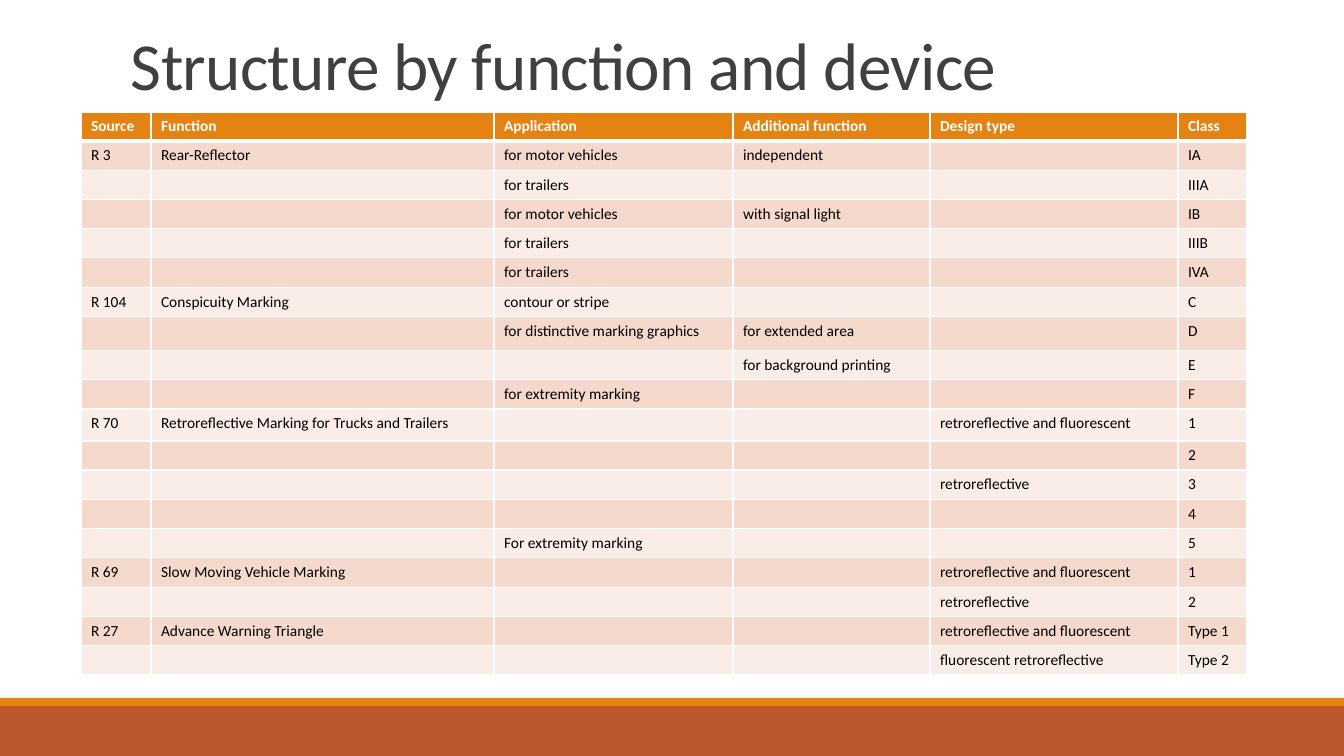
from lxml import etree
from pptx import Presentation
from pptx.dml.color import RGBColor
from pptx.enum.shapes import MSO_SHAPE
from pptx.enum.text import MSO_ANCHOR
from pptx.oxml.ns import qn
from pptx.util import Pt

RECTANGLE = MSO_SHAPE.RECTANGLE
TOP = MSO_ANCHOR.TOP

# Content
TITLE = "Structure by function and device"
HEADER = ("Source", "Function", "Application", "Additional function", "Design type", "Class")
BOTH = "retroreflective and fluorescent"
ROWS = [
    ("R 3", "Rear-Reflector", "for motor vehicles", "independent", "", "IA"),
    ("", "", "for trailers", "", "", "IIIA"),
    ("", "", "for motor vehicles", "with signal light", "", "IB"),
    ("", "", "for trailers", "", "", "IIIB"),
    ("", "", "for trailers", "", "", "IVA"),
    ("R 104", "Conspicuity Marking", "contour or stripe", "", "", "C"),
    ("", "", "for distinctive marking graphics", "for extended area", "", "D"),
    ("", "", "", "for background printing", "", "E"),
    ("", "", "for extremity marking", "", "", "F"),
    ("R 70", "Retroreflective Marking for Trucks and Trailers", "", "", BOTH, "1"),
    ("", "", "", "", "", "2"),
    ("", "", "", "", "retroreflective", "3"),
    ("", "", "", "", "", "4"),
    ("", "", "For extremity marking", "", "", "5"),
    ("R 69", "Slow Moving Vehicle Marking", "", "", BOTH, "1"),
    ("", "", "", "", "retroreflective", "2"),
    ("R 27", "Advance Warning Triangle", "", "", BOTH, "Type 1"),
    ("", "", "", "", "fluorescent retroreflective", "Type 2"),
]

# Theme and layout, lengths in px
THEME = {
    "font": "Calibri", "title_size": 48, "table_size": 11,
    "title": "404040", "header_text": "FFFFFF", "body_text": "000000",
    "accent": "E48312", "footer": "BD582C", "border": "FFFFFF",
    "bands": ("F5D9CC", "FAEDE7"),
}
SLIDE_WIDTH, SLIDE_HEIGHT = 1344, 756
TITLE_BOX = (121, 31, 1109, 160)
TABLE_LEFT, TABLE_TOP = 81, 112
COLUMN_WIDTHS = (70, 343, 239, 197, 248, 69)
ROW_HEIGHT = 29
TALL_ROWS = {5: 30, 7: 34, 10: 32, 15: 30}
FOOTER_BARS = [("footer", 706, 50), ("accent", 698, 8)]
THIN, THICK = 1, 3


def px(length):
    return round(length * 914400 / 100.8)


def color(name):
    return RGBColor.from_string(name)


def style_run(run, size, text_color, bold=False):
    run.font.name = THEME["font"]
    run.font.size = Pt(size)
    run.font.bold = bold
    run.font.color.rgb = color(text_color)


def add_border(cell, side, points):
    line = etree.SubElement(cell._tc.get_or_add_tcPr(), qn(f"a:ln{side}"), w=str(Pt(points)))
    fill = etree.SubElement(line, qn("a:solidFill"))
    etree.SubElement(fill, qn("a:srgbClr"), val=THEME["border"])


def fill_cell(cell, text, row_index):
    is_header = row_index == 0
    widths = {
        "L": THIN, "R": THIN,
        "T": THICK if row_index == 1 else THIN,
        "B": THICK if is_header else THIN,
    }
    for side, points in widths.items():
        add_border(cell, side, points)
    cell.fill.solid()
    cell.fill.fore_color.rgb = color(
        THEME["accent"] if is_header else THEME["bands"][(row_index - 1) % 2])
    paragraph = cell.text_frame.paragraphs[0]
    if text:
        paragraph.text = text
        text_color = THEME["header_text" if is_header else "body_text"]
        style_run(paragraph.runs[0], THEME["table_size"], text_color, is_header)
    else:
        # Keeps empty cells from stretching their row
        etree.SubElement(paragraph._p, qn("a:endParaRPr"), sz=str(THEME["table_size"] * 100))


def add_footer(slide):
    for fill_name, top, height in FOOTER_BARS:
        bar = slide.shapes.add_shape(RECTANGLE, 0, px(top), px(SLIDE_WIDTH), px(height))
        bar.shadow.inherit = False
        bar.fill.solid()
        bar.fill.fore_color.rgb = color(THEME[fill_name])
        bar.line.fill.background()


def add_structure_table(slide):
    rows = [HEADER, *ROWS]
    heights = [TALL_ROWS.get(index, ROW_HEIGHT) for index in range(len(rows))]
    table = slide.shapes.add_table(
        len(rows), len(HEADER), px(TABLE_LEFT), px(TABLE_TOP),
        px(sum(COLUMN_WIDTHS)), px(sum(heights))).table
    table.first_row = table.horz_banding = False
    for column, width in zip(table.columns, COLUMN_WIDTHS):
        column.width = px(width)
    for row_index, texts in enumerate(rows):
        table.rows[row_index].height = px(heights[row_index])
        for column_index, text in enumerate(texts):
            fill_cell(table.cell(row_index, column_index), text, row_index)


def add_title(slide):
    text_frame = slide.shapes.add_textbox(*map(px, TITLE_BOX)).text_frame
    text_frame.word_wrap = True
    text_frame.vertical_anchor = TOP
    text_frame.text = TITLE
    paragraph = text_frame.paragraphs[0]
    paragraph.line_spacing = 0.85
    run = paragraph.runs[0]
    style_run(run, THEME["title_size"], THEME["title"])
    run._r.get_or_add_rPr().set("spc", "-50")


def main():
    presentation = Presentation()
    presentation.slide_width = px(SLIDE_WIDTH)
    presentation.slide_height = px(SLIDE_HEIGHT)
    slide = presentation.slides.add_slide(presentation.slide_layouts[6])
    add_footer(slide)
    add_structure_table(slide)
    add_title(slide)
    presentation.save("out.pptx")


if __name__ == "__main__":
    main()
